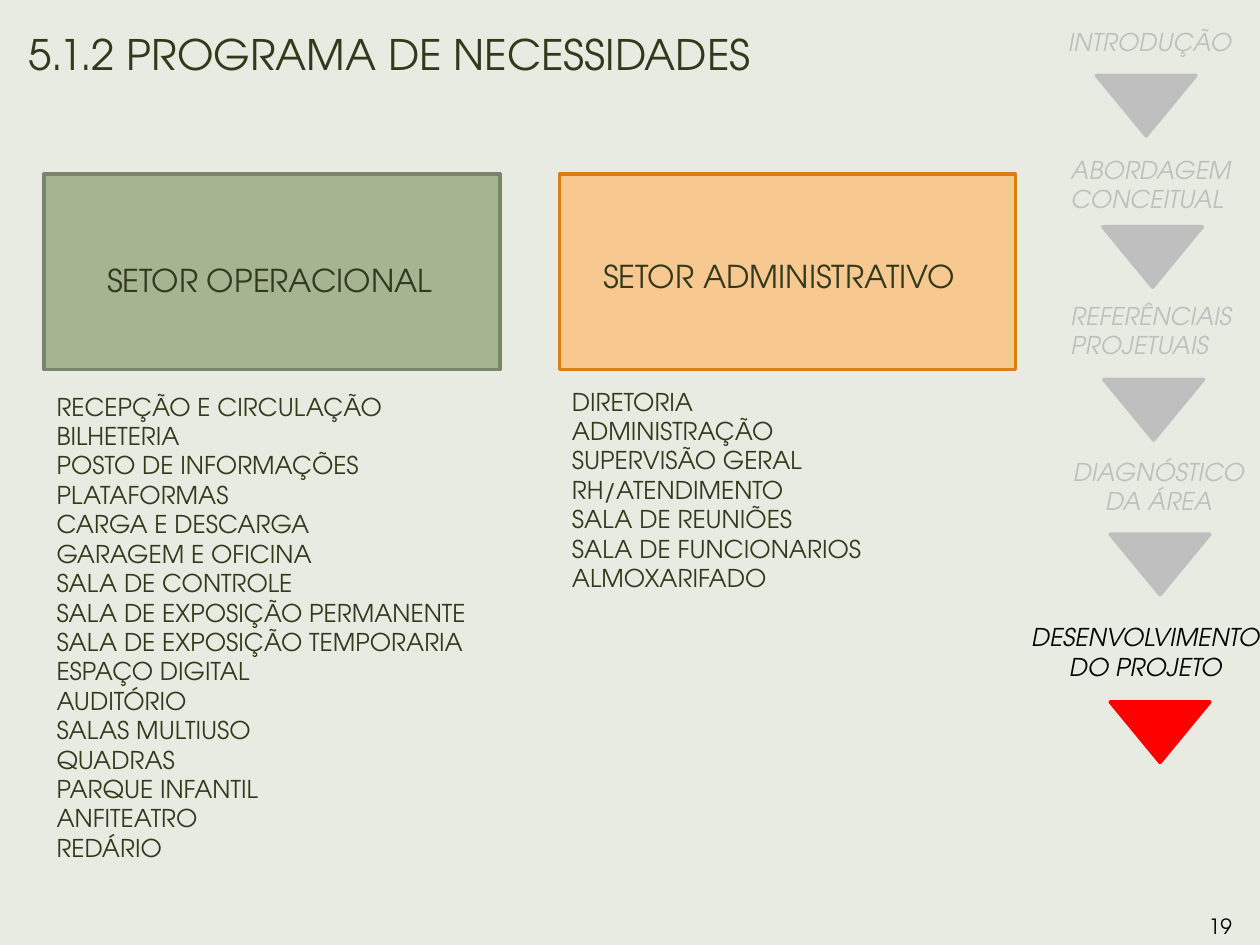
from dataclasses import dataclass

from pptx import Presentation
from pptx import util as u
from pptx.dml.color import RGBColor
from pptx.enum import shapes, text


@dataclass(frozen=True)
class Theme:
    font: str = "TeX Gyre Adventor"
    background: str = "E8EBE2"
    ink: str = "333A1C"
    muted: str = "BFBFBF"
    active: str = "FF0000"
    black: str = "000000"
    title: int = 24
    heading: int = 18
    body: int = 14
    number: int = 12
    line: int = 2


@dataclass(frozen=True)
class Box:
    left: float
    top: float
    width: float
    height: float

    def lengths(self) -> list[u.Cm]:
        return [u.Cm(v) for v in (self.left, self.top, self.width, self.height)]


@dataclass(frozen=True)
class Step:
    lines: list[str]
    box: Box
    arrow_left: float
    arrow_top: float
    centered: bool = False
    active: bool = False


@dataclass(frozen=True)
class Sector:
    name: str
    left: float
    fill: str
    border: str
    name_box: Box
    rooms_box: Box
    rooms: list[str]


THEME = Theme()
ALIGN = text.PP_ALIGN

STEPS = [
    Step(["INTRODUÇÃO"], Box(21.29, 0.43, 3.84, 0.86), 22.1, 1.52),
    Step(["ABORDAGEM", "CONCEITUAL"], Box(21.34, 3, 3.94, 1.45), 22.23, 4.57),
    Step(["REFERÊNCIAIS", "PROJETUAIS"], Box(21.34, 5.94, 3.78, 1.45), 22.25, 7.65),
    Step(["DIAGNÓSTICO", "DA ÁREA"], Box(21.36, 9.09, 4.01, 1.45), 22.38, 10.77,
         centered=True),
    Step(["DESENVOLVIMENTO", "DO PROJETO"], Box(20.47, 12.42, 5.26, 1.45), 22.38, 14.15,
         centered=True, active=True),
]

SECTORS = [
    Sector("SETOR OPERACIONAL", 0.89, "A5B592", "7A866C",
           Box(1.91, 5.13, 7.19, 1.02), Box(0.89, 7.77, 8.92, 9.83),
           ["RECEPÇÃO E CIRCULAÇÃO", "BILHETERIA", "POSTO DE INFORMAÇÕES",
            "PLATAFORMAS", "CARGA E DESCARGA", "GARAGEM E OFICINA",
            "SALA DE CONTROLE", "SALA DE EXPOSIÇÃO PERMANENTE",
            "SALA DE EXPOSIÇÃO TEMPORARIA", "ESPAÇO DIGITAL", "AUDITÓRIO",
            "SALAS MULTIUSO", "QUADRAS", "PARQUE INFANTIL", "ANFITEATRO",
            "REDÁRIO"]),
    Sector("SETOR ADMINISTRATIVO", 11.28, "F8C891", "DD7E0E",
           Box(11.91, 5.05, 7.77, 1.02), Box(11.28, 7.67, 6.38, 5.05),
           ["DIRETORIA", "ADMINISTRAÇÃO", "SUPERVISÃO GERAL", "RH/ATENDIMENTO",
            "SALA DE REUNIÕES", "SALA DE FUNCIONARIOS", "ALMOXARIFADO"]),
]


def add_text(s, box: Box, lines: list[str], size: int, color: str = THEME.ink,
             italic: bool = False, align=ALIGN.LEFT, wrap: bool = False,
             anchor=text.MSO_ANCHOR.TOP):
    tf = s.shapes.add_textbox(*box.lengths()).text_frame
    fit = text.MSO_AUTO_SIZE.NONE if wrap else text.MSO_AUTO_SIZE.SHAPE_TO_FIT_TEXT
    for name, value in {"word_wrap": wrap, "auto_size": fit,
                        "vertical_anchor": anchor}.items():
        setattr(tf, name, value)
    font_format = {"name": THEME.font, "size": u.Pt(size), "italic": italic}
    for i, line in enumerate(lines):
        p = tf.add_paragraph() if i else tf.paragraphs[0]
        p.alignment = align
        r = p.add_run()
        r.text = line
        for name, value in font_format.items():
            setattr(r.font, name, value)
        r.font.color.rgb = RGBColor.from_string(color)
    return tf


def add_block(s, kind: shapes.MSO_SHAPE, box: Box, fill: str, border: str,
              rotation: int = 0) -> None:
    sp = s.shapes.add_shape(kind, *box.lengths())
    sp.rotation = rotation
    sp.shadow.inherit = False
    sp.fill.solid()
    sp.fill.fore_color.rgb = RGBColor.from_string(fill)
    sp.line.color.rgb = RGBColor.from_string(border)
    sp.line.width = u.Pt(THEME.line)


def add_step(s, step: Step) -> None:
    add_text(s, step.box, step.lines, THEME.body,
             THEME.black if step.active else THEME.muted, italic=True,
             align=ALIGN.CENTER if step.centered else ALIGN.LEFT)
    color = THEME.active if step.active else THEME.muted
    add_block(s, shapes.MSO_SHAPE.ISOSCELES_TRIANGLE,
              Box(step.arrow_left, step.arrow_top, 2.01, 1.22), color, color, 180)


def add_sector(s, sector: Sector) -> None:
    add_block(s, shapes.MSO_SHAPE.RECTANGLE, Box(sector.left, 3.51, 9.19, 3.94),
              sector.fill, sector.border)
    add_text(s, sector.name_box, [sector.name], THEME.heading)
    add_text(s, sector.rooms_box, sector.rooms, THEME.body)


def main() -> None:
    prs = Presentation()
    prs.slide_width, prs.slide_height = u.Cm(25.4), u.Cm(19.05)
    s = prs.slides.add_slide(prs.slide_layouts[6])
    s.background.fill.solid()
    s.background.fill.fore_color.rgb = RGBColor.from_string(THEME.background)

    title = add_text(s, Box(0.18, 0.46, 18.31, 1.8), ["5.1.2 PROGRAMA DE NECESSIDADES"],
                     THEME.title, wrap=True)
    title.margin_left = u.Cm(0.4)
    for step in STEPS:
        add_step(s, step)
    add_text(s, Box(23.9, 18.21, 1.4, 0.84), ["19"], THEME.number, THEME.black,
             align=ALIGN.CENTER, wrap=True, anchor=text.MSO_ANCHOR.BOTTOM)
    for sector in SECTORS:
        add_sector(s, sector)
    prs.save("out.pptx")


if __name__ == "__main__":
    main()
